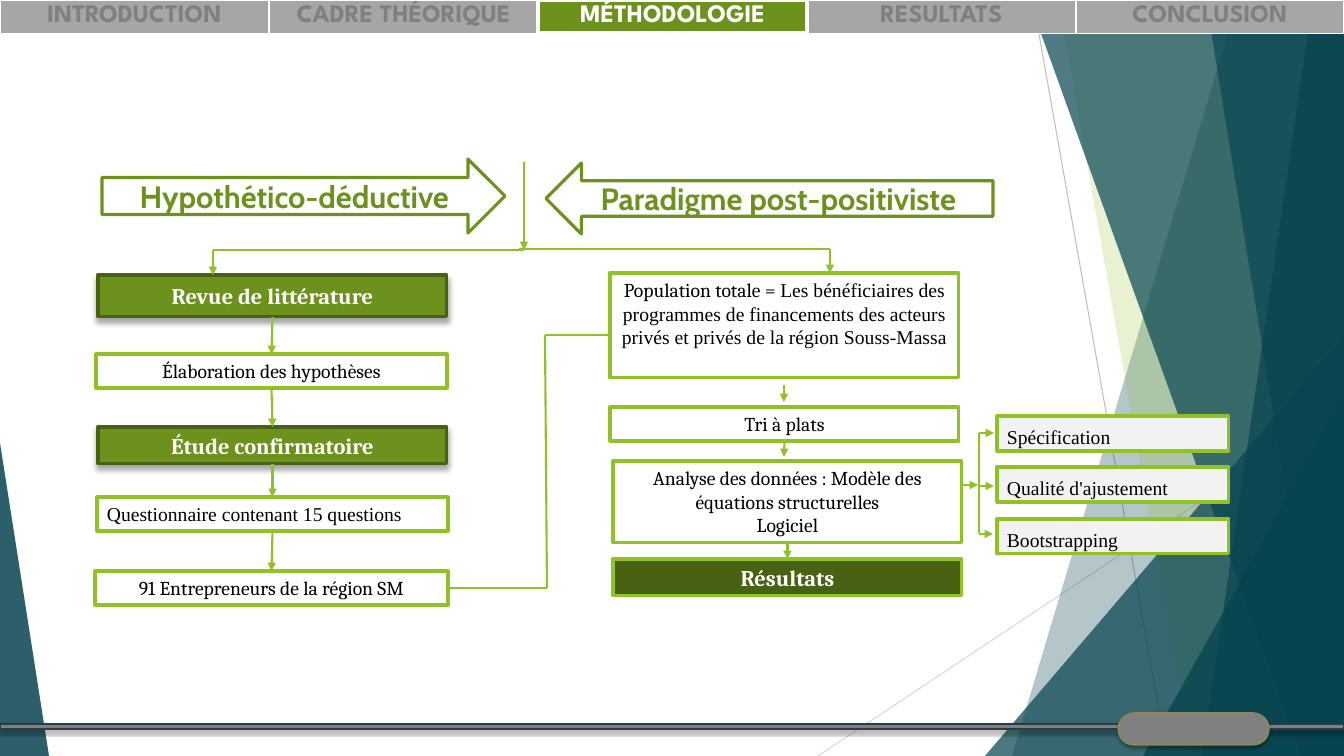
from lxml.etree import SubElement
from pptx import Presentation
from pptx.dml.color import RGBColor
from pptx.enum.shapes import MSO_CONNECTOR, MSO_SHAPE
from pptx.enum.text import MSO_ANCHOR, PP_ALIGN
from pptx.oxml import parse_xml
from pptx.oxml.ns import nsdecls, qn
from pptx.util import Pt

PX = 914400 / 100.8
WIDTH, HEIGHT = 1344, 756

COLORS = {
    "white": "FFFFFF", "black": "000000", "lime": "90C226", "green": "6C921D",
    "dark": "486113", "teal": "084450", "gray": "808080", "tab": "A6A6A6",
    "pale": "F2F2F2", "slate": "2C3C43", "gold": "918655",
    "rule": "BFBFBF", "faint": "D9D9D9",
}

TABS = ["INTRODUCTION", "CADRE THÉORIQUE", "MÉTHODOLOGIE", "RESULTATS", "CONCLUSION"]
TAB_WIDTHS = [269, 269, 269, 269, 268]
ACTIVE_TAB = 2

BACKGROUND_LINES = [
    ((1033, 0), (1167, 756), "rule"),
    ((1344, 406), (818, 756), "faint"),
]
FACETS = [
    ("band", (1238, 1344, 1344, 1012), "teal", 30),
    ("band", (1058, 1344, 1344, 1192), "lime", 20),
    ("triangle", (985, 336, 359, 420, 1), "teal", 72),
    ("band", (1029, 1344, 1344, 1301), "teal", 70),
    ("band", (1313, 1344, 1344, 1202), "teal", 70),
    ("band", (1206, 1344, 1344, 1329), "teal", 65),
    ("triangle", (1143, 396, 201, 360, 1), "teal", 80),
    ("triangle", (0, 443, 49, 313, 0), "teal", 85),
]

STYLES = {
    "header": dict(fill="green", line="dark", size=16, color="white", bold=True,
                   anchor=MSO_ANCHOR.MIDDLE, shadow=4),
    "step": dict(fill="white", line="lime", size=14, color="black"),
    "left": dict(fill="white", line="lime", size=14, color="black", align=PP_ALIGN.LEFT),
    "result": dict(fill="dark", line="lime", size=16, color="white", bold=True),
    "test": dict(fill="pale", line="lime", size=14, color="black", align=PP_ALIGN.LEFT,
                 spacing=1.15, after=10),
    "banner": dict(fill=None, line="green", size=22, color="green", bold=True,
                   anchor=MSO_ANCHOR.MIDDLE),
}
SERIF, TIMES, CABIN = "Cambria", "Times New Roman", "Cabin"
RECTANGLE = MSO_SHAPE.RECTANGLE

BOXES = {
    "review": (RECTANGLE, (98, 275, 349, 42), "header", [[("Revue de littérature", SERIF)]]),
    "hypotheses": (RECTANGLE, (96, 354, 351, 34), "step", [[("Élaboration des hypothèses", SERIF)]]),
    "study": (RECTANGLE, (98, 427, 349, 37), "header", [[("Étude confirmatoire", SERIF)]]),
    "survey": (RECTANGLE, (97, 497, 351, 34), "left", [[("Questionnaire contenant 15 questions", TIMES)]]),
    "sample": (RECTANGLE, (95, 571, 353, 34), "step", [[("91 Entrepreneurs de la région SM", SERIF)]]),
    "population": (RECTANGLE, (610, 273, 349, 105), "step", [[
        ("Population totale = ", SERIF),
        ("Les bénéficiaires des programmes de financements des acteurs privés "
         "et privés de la région Souss-Massa", TIMES)]]),
    "deductive": (MSO_SHAPE.RIGHT_ARROW, (102, 159, 403, 74), "banner", [[("Hypothético-déductive", CABIN)]]),
    "paradigm": (MSO_SHAPE.LEFT_ARROW, (546, 163, 447, 71), "banner", [[("Paradigme post-positiviste", CABIN)]]),
    "sorting": (RECTANGLE, (610, 407, 349, 34), "step", [[("Tri à plats", SERIF)]]),
    "results": (RECTANGLE, (613, 559, 349, 37), "result", [[("Résultats", SERIF)]]),
    "analysis": (RECTANGLE, (613, 461, 349, 82), "step", [
        [("Analyse des données : Modèle des équations structurelles", SERIF)],
        [("Logiciel", SERIF)]]),
    "specification": (RECTANGLE, (997, 416, 232, 35), "test", [[("Spécification", TIMES)]]),
    "fit": (RECTANGLE, (997, 467, 232, 35), "test", [[("Qualité d'ajustement", TIMES)]]),
    "bootstrap": (RECTANGLE, (997, 519, 232, 35), "test", [[("Bootstrapping", TIMES)]]),
}

TOP, BOTTOM, RIGHT = 0, 2, 3
CONNECTORS = [
    (("review", BOTTOM), ("hypotheses", TOP), True),
    (("hypotheses", BOTTOM), ("study", TOP), True),
    (("study", BOTTOM), ("survey", TOP), True),
    (("survey", BOTTOM), ("sample", TOP), True),
    (("sample", RIGHT), (547, 588), False),
    ((545, 335), (547, 588), False),
    ((545, 335), (610, 335), False),
    ((524, 162), (524, 250), True),
    ((213, 250), (524, 250), False),
    ((519, 249), (830, 249), False),
    ((213, 250), (213, 275), True),
    ((830, 249), (830, 273), True),
    ((784, 385), (784, 402), True),
    (("sorting", BOTTOM), (784, 457), True),
    (("analysis", BOTTOM), ("results", TOP), True),
    ((979, 533), (979, 433), False),
    ((979, 433), (994, 433), True),
    ((979, 486), (994, 486), True),
    ((979, 534), (993, 534), True),
    ((963, 485), (978, 485), True),
]


def px(*lengths):
    return [round(length * PX) for length in lengths]


def rgb(name):
    return RGBColor.from_string(COLORS[name])


def paint(shape, fill, line=None, width=1.0, opacity=None, shadow=None):
    if fill:
        shape.fill.solid()
        shape.fill.fore_color.rgb = rgb(fill)
    else:
        shape.fill.background()
    if opacity:
        color = shape.fill._xPr.find(qn("a:solidFill"))[0]
        SubElement(color, qn("a:alpha"), val=str(opacity * 1000))
    if line:
        shape.line.color.rgb = rgb(line)
        shape.line.width = Pt(width)
    else:
        shape.line.fill.background()
    shape.shadow.inherit = False
    if shadow:
        effects = shape._element.spPr.find(qn("a:effectLst"))
        effects.append(parse_xml(
            f'<a:outerShdw {nsdecls("a")} blurRad="{Pt(shadow)}" dist="{Pt(shadow - 1)}" '
            'dir="5400000" rotWithShape="0"><a:srgbClr val="000000">'
            '<a:alpha val="35000"/></a:srgbClr></a:outerShdw>'))


def write(paragraph, text, font, size, color, bold=False):
    run = paragraph.add_run()
    run.text = text
    run.font.name = font
    run.font.size = Pt(size)
    run.font.bold = bold
    run.font.color.rgb = rgb(color)


def add_facet(shapes, kind, geometry, color, opacity):
    if kind == "band":
        corners = list(zip(geometry, (0, 0, HEIGHT, HEIGHT)))
        builder = shapes.build_freeform(*corners[0], scale=PX)
        builder.add_line_segments(corners[1:], close=True)
        facet = builder.convert_to_shape()
    else:
        facet = shapes.add_shape(MSO_SHAPE.ISOSCELES_TRIANGLE, *px(*geometry[:4]))
        facet.adjustments[0] = geometry[4]
    paint(facet, color, opacity=opacity)


def add_box(shapes, preset, place, style_name, paragraphs):
    style = STYLES[style_name]
    box = shapes.add_shape(preset, *px(*place))
    paint(box, style["fill"], style["line"], 2.25, shadow=style.get("shadow"))
    frame = box.text_frame
    frame.word_wrap = True
    frame.vertical_anchor = style.get("anchor", MSO_ANCHOR.TOP)
    for index, runs in enumerate(paragraphs):
        paragraph = frame.add_paragraph() if index else frame.paragraphs[0]
        paragraph.alignment = style.get("align", PP_ALIGN.CENTER)
        if "spacing" in style:
            paragraph.line_spacing = style["spacing"]
            paragraph.space_after = Pt(style["after"])
        for text, font in runs:
            write(paragraph, text, font, style["size"], style["color"], style.get("bold", False))
    return box


def add_line(shapes, boxes, start, end, color, width, arrow=False):
    joined = [isinstance(point[0], str) for point in (start, end)]
    begin_place = (0, 0) if joined[0] else start
    end_place = (0, 0) if joined[1] else end
    line = shapes.add_connector(MSO_CONNECTOR.STRAIGHT, *px(*begin_place, *end_place))
    if joined[0]:
        line.begin_connect(boxes[start[0]], start[1])
    if joined[1]:
        line.end_connect(boxes[end[0]], end[1])
    line.line.color.rgb = rgb(color)
    line.line.width = Pt(width)
    if arrow:
        SubElement(line.line._get_or_add_ln(), qn("a:tailEnd"), type="triangle")
    SubElement(line._element.spPr, qn("a:effectLst"))


def add_tabs(shapes):
    table = shapes.add_table(1, len(TABS), *px(0, 0, WIDTH, 33)).table
    table.first_row = table.horz_banding = False
    table.rows[0].height = px(33)[0]
    for index, (label, width) in enumerate(zip(TABS, TAB_WIDTHS)):
        table.columns[index].width = px(width)[0]
        active = index == ACTIVE_TAB
        cell = table.cell(0, index)
        cell.fill.solid()
        cell.fill.fore_color.rgb = rgb("green" if active else "tab")
        paragraph = cell.text_frame.paragraphs[0]
        paragraph.alignment = PP_ALIGN.CENTER
        write(paragraph, label, "League Spartan", 18, "white" if active else "gray", True)
        neighbours = {"L": index - 1, "R": index + 1}
        for order, side in enumerate("LRTB"):
            thick = active or neighbours.get(side) == ACTIVE_TAB
            cell._tc.get_or_add_tcPr().insert(order, parse_xml(
                f'<a:ln{side} {nsdecls("a")} w="{Pt(3 if thick else 1)}"><a:solidFill>'
                f'<a:srgbClr val="{COLORS["white"]}"/></a:solidFill></a:ln{side}>'))


def main():
    presentation = Presentation()
    presentation.slide_width, presentation.slide_height = px(WIDTH, HEIGHT)
    shapes = presentation.slides.add_slide(presentation.slide_layouts[6]).shapes
    for start, end, color in BACKGROUND_LINES:
        add_line(shapes, {}, start, end, color, 0.75)
    for facet in FACETS:
        add_facet(shapes, *facet)
    add_tabs(shapes)
    bar = shapes.add_shape(RECTANGLE, *px(0, 724, WIDTH, 5))
    paint(bar, "gray", "slate", shadow=3)
    pill = shapes.add_shape(MSO_SHAPE.ROUNDED_RECTANGLE, *px(1118, 713, 151, 32))
    pill.adjustments[0] = 0.5
    paint(pill, "gray", "gold", shadow=3)
    boxes = {name: add_box(shapes, *box) for name, box in BOXES.items()}
    for start, end, arrow in CONNECTORS:
        add_line(shapes, boxes, start, end, "lime", 1.5, arrow)
    presentation.save("out.pptx")


if __name__ == "__main__":
    main()
